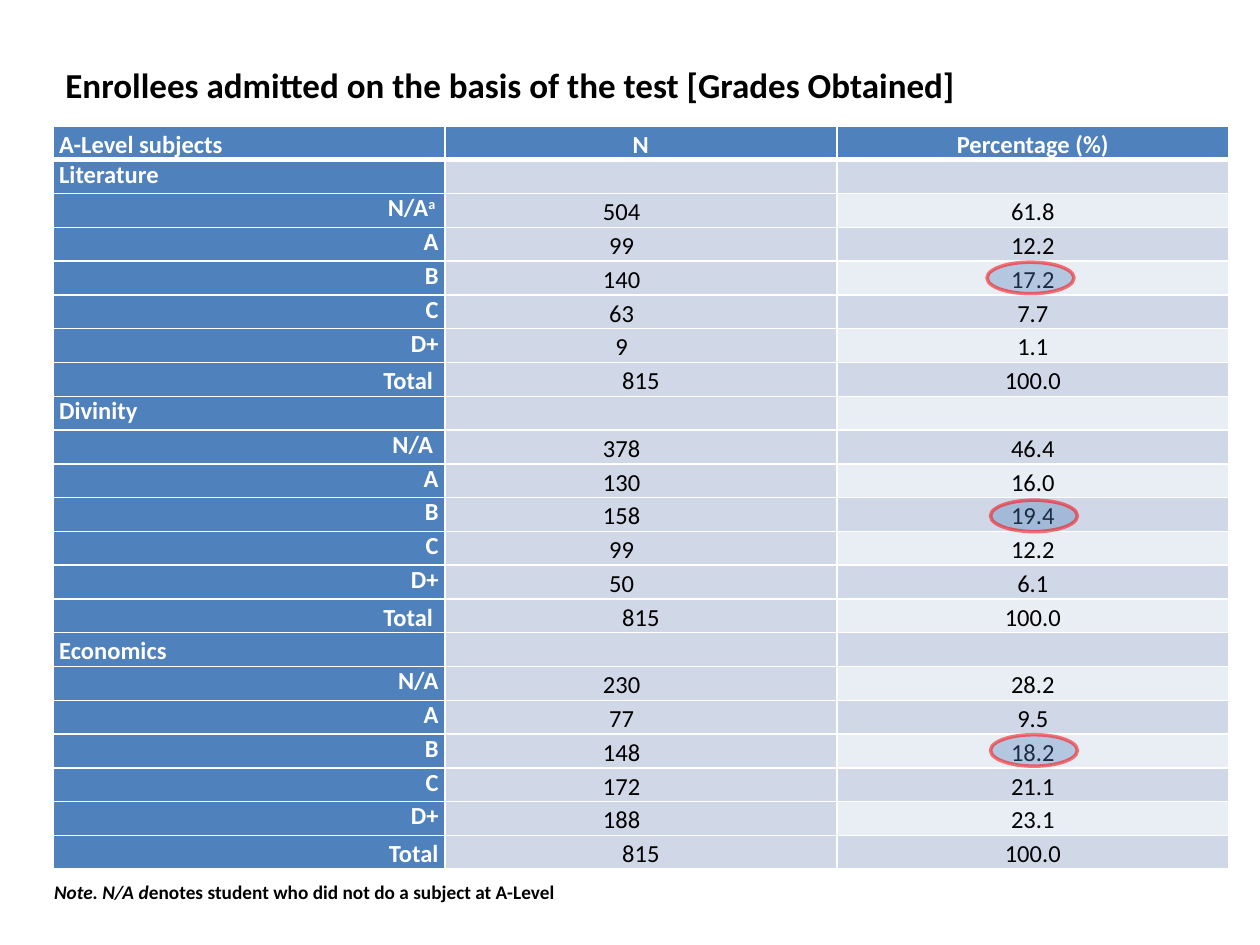
from lxml import etree
from pptx import Presentation
from pptx.dml.color import RGBColor
from pptx.enum import shapes, text
from pptx.oxml import ns
from pptx.util import Pt

HUES = {"head": "4F81BD", "band": "D0D8E8", "pale": "E9EDF4",
        "white": "FFFFFF", "ink": "000000", "ring": "FF0000"}
FONT = "Calibri"
LEFT, MID, RIGHT = text.PP_ALIGN.LEFT, text.PP_ALIGN.CENTER, text.PP_ALIGN.RIGHT
FULL = text.PP_ALIGN.JUSTIFY
LOOSE = 1.13  # the widest spacing that fits the row height
ROW_H, COL_W = 19.32, 224
N_PAD = 25.6  # right inset that sets the counts left of centre

HEADS = ("A-Level subjects", "N", "Percentage (%)")
GRADES = ("A", "B", "C", "D+")
# subject, label of the first row, label of the last row, (count, percentage)
GROUPS = (
    ("Literature", "N/A", "Total ",
     ((504, 61.8), (99, 12.2), (140, 17.2), (63, 7.7), (9, 1.1), (815, 100.0))),
    ("Divinity", "N/A ", "Total ",
     ((378, 46.4), (130, 16.0), (158, 19.4), (99, 12.2), (50, 6.1), (815, 100.0))),
    ("Economics", "N/A", "Total",
     ((230, 28.2), (77, 9.5), (148, 18.2), (172, 21.1), (188, 23.1), (815, 100.0))),
)
RINGS = ((564, 149.8), (566, 285.8), (566, 419.8))


def tint(name):
    return RGBColor.from_string(HUES[name])


def write(para, words, size=14, hue="ink", bold=False, slant=False,
          align=None, space=None):
    """Add a run to the paragraph and return it."""
    if align is not None:
        para.alignment = align
    if space:
        para.line_spacing = space
    run = para.add_run()
    run.text = words
    font = run.font
    font.name, font.size, font.bold, font.italic = FONT, Pt(size), bold, slant
    font.color.rgb = tint(hue)
    return run


def edge(cell, side, width):
    line = etree.SubElement(cell._tc.get_or_add_tcPr(), ns.qn("a:ln" + side),
                            w=str(Pt(width)))
    fill = etree.SubElement(line, ns.qn("a:solidFill"))
    etree.SubElement(fill, ns.qn("a:srgbClr"), val=HUES["white"])


def paint(cell, row, col):
    """Set the borders, fill and insets that follow from the cell's place."""
    top, low = (3 if row == 1 else 1), (3 if row == 0 else 1)
    for side, width in zip("LRTB", (1, 1, top, low)):
        edge(cell, side, width)
    if row == 0 or col == 0:
        hue = "head"
    else:
        hue = "pale" if col == 2 and row % 2 == 0 else "band"
    cell.fill.solid()
    cell.fill.fore_color.rgb = tint(hue)
    cell.margin_left = cell.margin_right = Pt(3.6)
    cell.margin_top = cell.margin_bottom = 0


def blank(cell):
    """Keep an empty cell from stretching its row."""
    etree.SubElement(first(cell)._p, ns.qn("a:endParaRPr"), sz="1400")


def first(cell):
    return cell.text_frame.paragraphs[0]


def fill_group(grid, start, group):
    name, none, total, stats = group
    last = group is GROUPS[-1]
    write(first(grid.cell(start, 0)), name, hue="white", bold=True,
          align=FULL if last else LEFT, space=LOOSE if last else None)
    for col in (1, 2):
        blank(grid.cell(start, col))
    labels = (none, *GRADES, total)
    for row, (label, (count, share)) in enumerate(zip(labels, stats), start + 1):
        whole = label == total
        write(first(grid.cell(row, 0)), label, hue="white", bold=True,
              align=RIGHT, space=LOOSE if whole else None)
        cell = grid.cell(row, 1)
        if not whole:
            cell.margin_right = Pt(N_PAD)
        write(first(cell), str(count), align=MID, space=LOOSE)
        write(first(grid.cell(row, 2)), f"{share:.1f}", align=MID, space=LOOSE)


def add_grid(slide):
    span = len(GRADES) + 3
    rows = 1 + span * len(GROUPS)
    grid = slide.shapes.add_table(rows, len(HEADS), Pt(30.2), Pt(72),
                                  Pt(COL_W * len(HEADS)), Pt(ROW_H * rows)).table
    grid.first_row = grid.horz_banding = False
    for col in grid.columns:
        col.width = Pt(COL_W)
    for row, line in enumerate(grid.rows):
        line.height = Pt(ROW_H)
        for col, cell in enumerate(line.cells):
            paint(cell, row, col)
    for col, head in enumerate(HEADS):
        write(first(grid.cell(0, col)), head, hue="white", bold=True,
              align=MID if col else LEFT, space=LOOSE)
    for num, group in enumerate(GROUPS):
        fill_group(grid, 1 + num * span, group)
    mark = write(first(grid.cell(2, 0)), "a ", hue="white", bold=True)
    mark.font._element.set("baseline", "30000")


def add_title(slide):
    title = slide.shapes.title
    title.left, title.top, title.width, title.height = (
        Pt(30.2), Pt(32.4), Pt(612), Pt(31.5))
    frame = title.text_frame
    frame.vertical_anchor = text.MSO_ANCHOR.TOP
    write(frame.paragraphs[0],
          "Enrollees admitted on the basis of the test [Grades Obtained]",
          size=20, bold=True, align=FULL)


def add_note(slide):
    frame = slide.shapes.add_textbox(Pt(23.8), Pt(499.7), Pt(360), Pt(20.6)).text_frame
    frame.word_wrap = True
    para = frame.paragraphs[0]
    write(para, "Note. N/A d", size=11, bold=True, slant=True)
    write(para, "enotes student who did not do a subject at A-Level",
          size=11, bold=True)


def fade(fill, share):
    """Make a solid fill show through; share is the opacity in percent."""
    shade = fill._xPr.find(".//" + ns.qn("a:srgbClr"))
    etree.SubElement(shade, ns.qn("a:alpha"), val=str(share * 1000))


def add_ring(slide, left, top):
    ring = slide.shapes.add_shape(shapes.MSO_SHAPE.OVAL, Pt(left), Pt(top),
                                  Pt(49.7), Pt(18))
    ring.shadow.inherit = False
    ring.line.width = Pt(2)
    for fill, hue, share in ((ring.fill, "head", 35), (ring.line.fill, "ring", 52)):
        fill.solid()
        fill.fore_color.rgb = tint(hue)
        fade(fill, share)


def main():
    deck = Presentation()
    deck.slide_width, deck.slide_height = Pt(720), Pt(540)
    slide = deck.slides.add_slide(deck.slide_layouts[5])
    add_title(slide)
    add_grid(slide)
    add_note(slide)
    for left, top in RINGS:
        add_ring(slide, left, top)
    deck.save("out.pptx")


if __name__ == "__main__":
    main()
